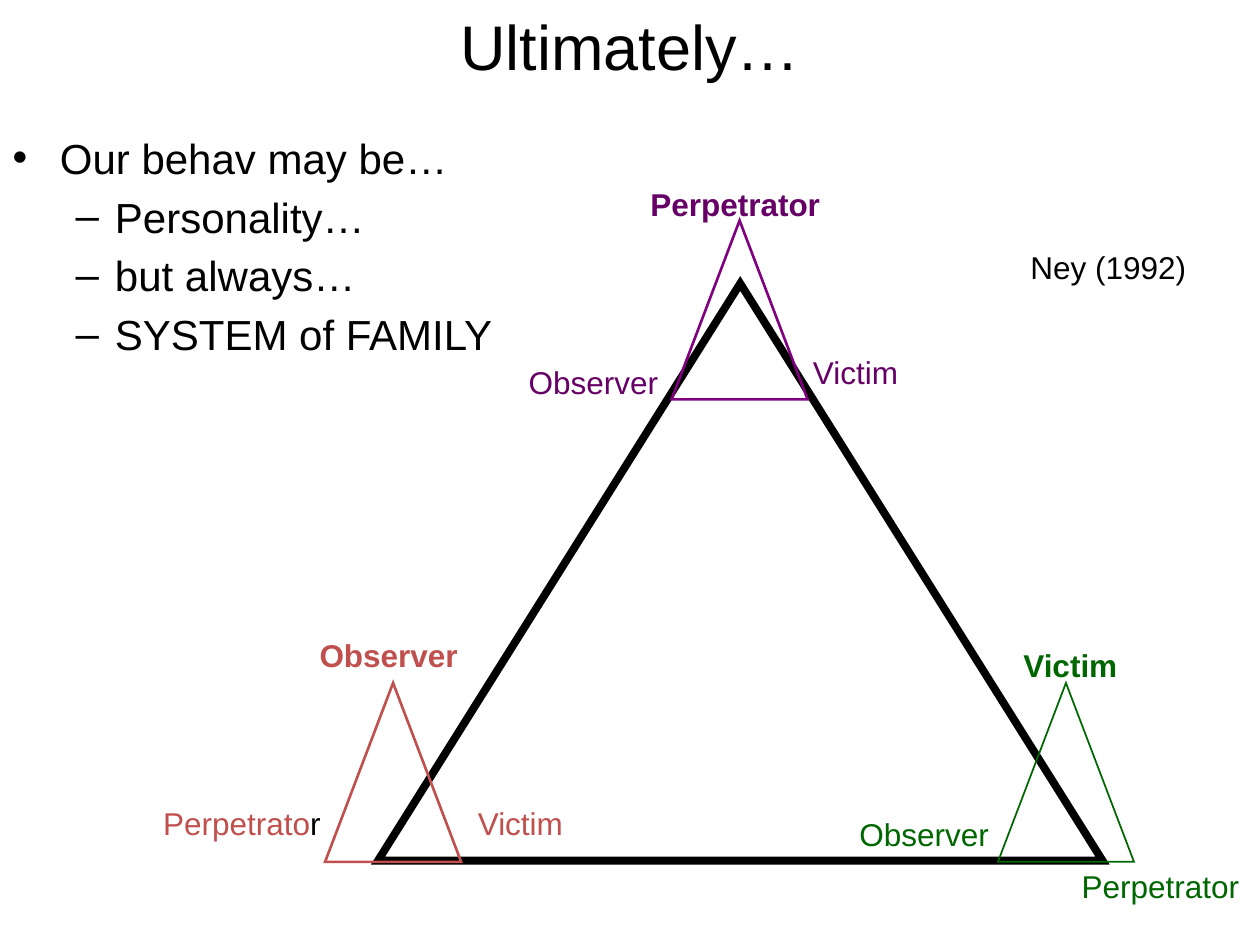
from lxml import etree
from pptx import Presentation
from pptx.dml.color import RGBColor
from pptx.enum.shapes import MSO_SHAPE
from pptx.enum.text import MSO_ANCHOR, MSO_AUTO_SIZE, PP_ALIGN
from pptx.oxml.ns import qn
from pptx.util import Inches, Pt

TRIANGLE = MSO_SHAPE.ISOSCELES_TRIANGLE
CENTER, LEFT = PP_ALIGN.CENTER, PP_ALIGN.LEFT
FONT = "Arial"
BLACK, PURPLE, VIOLET, RED, GREEN = "000000", "660066", "800080", "C0504D", "006600"

TITLE = "Ultimately…"
BULLETS = [
    (0, "Our behav may be…"),
    (1, "Personality…"),
    (1, "but always…"),
    (1, "SYSTEM of FAMILY"),
]

SMALL_SIZE = (1.08, 1.42)
# left, top, (width, height), line colour, line width
TRIANGLES = [
    (3, 2.25, (5.75, 4.58), BLACK, 4.5),
    (5.33, 1.75, SMALL_SIZE, VIOLET, 1.5),
    (2.58, 5.42, SMALL_SIZE, RED, 1.5),
    (7.92, 5.42, SMALL_SIZE, GREEN, 1),
]

LABEL_HEIGHT = 0.4
# left, top, width, runs of (text, colour), bold, alignment
LABELS = [
    (4.92, 1.42, 1.83, [("Perpetrator", PURPLE)], True, CENTER),
    (2.42, 5, 1.33, [("Observer", RED)], True, CENTER),
    (7.58, 5.08, 1.83, [("Victim", GREEN)], True, CENTER),
    (3.67, 6.33, 0.92, [("Victim", RED)], False, CENTER),
    (6.33, 2.75, 0.92, [("Victim", PURPLE)], False, CENTER),
    (1.17, 6.33, 1.5, [("Perpetrato", RED), ("r", BLACK)], False, CENTER),
    (4, 2.83, 1.42, [("Observer", PURPLE)], False, CENTER),
    (6.42, 6.42, 1.83, [("Observer", GREEN)], False, CENTER),
    (8.42, 6.83, 1.58, [("Perpetrator", GREEN)], False, CENTER),
    (8.08, 1.92, 1.5, [("Ney (1992)", BLACK)], False, LEFT),
]


def color(hex_value):
    return RGBColor.from_string(hex_value)


def place(shape, left, top, width, height):
    shape.left, shape.top = Inches(left), Inches(top)
    shape.width, shape.height = Inches(width), Inches(height)


def add_run(paragraph, text, size, hex_value=BLACK, bold=False):
    run = paragraph.add_run()
    run.text = text
    run.font.name = FONT
    run.font.size = Pt(size)
    run.font.bold = bold
    run.font.color.rgb = color(hex_value)


def add_triangle(slide, left, top, size, hex_value, line_width):
    """Add an unfilled triangle with sharp corners."""
    box = [Inches(value) for value in (left, top, *size)]
    shape = slide.shapes.add_shape(TRIANGLE, *box)
    shape.shadow.inherit = False
    shape.fill.background()
    shape.line.color.rgb = color(hex_value)
    shape.line.width = Pt(line_width)
    line = shape.line._get_or_add_ln()
    etree.SubElement(line, qn("a:miter")).set("lim", "800000")


def add_label(slide, left, top, width, runs, bold, alignment):
    box = [Inches(value) for value in (left, top, width, LABEL_HEIGHT)]
    frame = slide.shapes.add_textbox(*box).text_frame
    frame.word_wrap = True
    frame.auto_size = MSO_AUTO_SIZE.SHAPE_TO_FIT_TEXT
    paragraph = frame.paragraphs[0]
    paragraph.alignment = alignment
    for text, hex_value in runs:
        add_run(paragraph, text, 18, hex_value, bold)


def main():
    presentation = Presentation()
    presentation.slide_width, presentation.slide_height = Inches(10), Inches(7.5)
    slide = presentation.slides.add_slide(presentation.slide_layouts[1])

    title, body = slide.placeholders
    place(title, 0.5, 0, 9, 0.72)
    title.text_frame.auto_size = MSO_AUTO_SIZE.NONE
    title.text_frame.vertical_anchor = MSO_ANCHOR.MIDDLE
    heading = title.text_frame.paragraphs[0]
    heading.alignment = CENTER
    add_run(heading, TITLE, 36)

    place(body, 0, 1, 9.75, 6.5)
    frame = body.text_frame
    frame.auto_size = MSO_AUTO_SIZE.NONE
    for index, (level, text) in enumerate(BULLETS):
        paragraph = frame.add_paragraph() if index else frame.paragraphs[0]
        paragraph.level = level
        add_run(paragraph, text, 24)

    for triangle in TRIANGLES:
        add_triangle(slide, *triangle)
    for label in LABELS:
        add_label(slide, *label)

    presentation.save("out.pptx")


if __name__ == "__main__":
    main()
